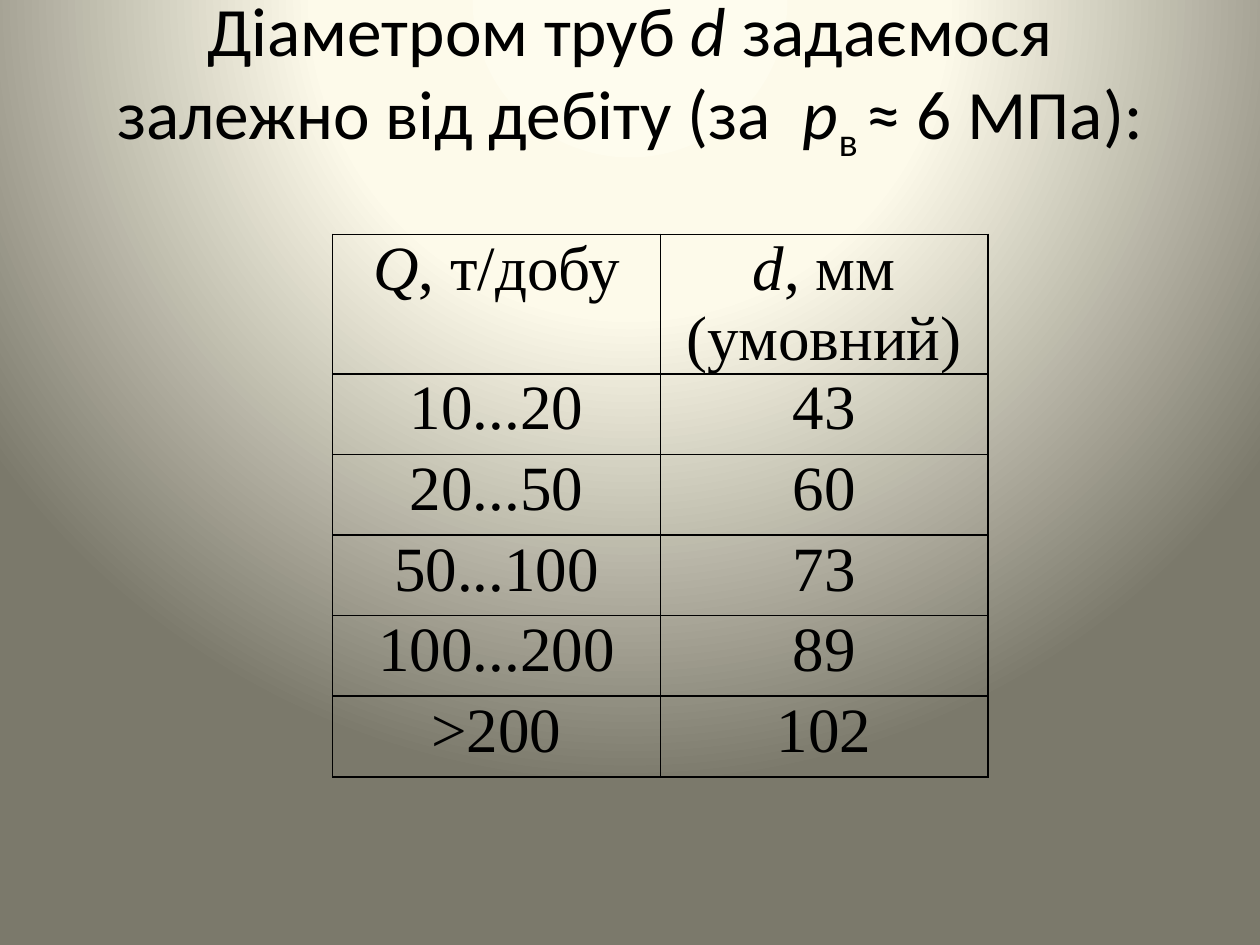
from dataclasses import dataclass

from pptx import Presentation
from pptx.dml.color import RGBColor
from pptx.enum.text import MSO_ANCHOR, MSO_AUTO_SIZE, PP_ALIGN
from pptx.oxml import parse_xml
from pptx.oxml.ns import nsdecls
from pptx.util import Inches, Pt

CENTER = PP_ALIGN.CENTER
MIDDLE, TOP = MSO_ANCHOR.MIDDLE, MSO_ANCHOR.TOP
NO_AUTOFIT = MSO_AUTO_SIZE.NONE
TITLE_ONLY = 5

TITLE_RUNS = [
    ("Діаметром труб ", ""),
    ("d", "italic"),
    (" задаємося залежно від дебіту (за  ", ""),
    ("р", "italic"),
    ("в ", "subscript"),
    ("≈ 6 МПа):", ""),
]
HEADER = [
    [("Q", "italic"), (", т/добу", "")],
    [("d", "italic"), (", мм (умовний)", "")],
]
DIAMETER_BY_FLOW = [
    ("10...20", "43"),
    ("20...50", "60"),
    ("50...100", "73"),
    ("100...200", "89"),
    (">200", "102"),
]


@dataclass(frozen=True)
class Theme:
    ink: str = "000000"
    glow: tuple = ((0, "FEFCEE"), (40, "FDFAEA"), (100, "7B796B"))
    title_font: str = "Calibri"
    title_size: float = 39.6
    table_font: str = "Times New Roman"
    table_size: float = 36
    border_width: float = 1


def apply_format(target, values):
    for name, value in values.items():
        setattr(target, name, value)


class SlideBuilder:
    def __init__(self, slide, theme):
        self.slide = slide
        self.theme = theme

    def background(self):
        """Radial gradient centred above the top edge of the slide."""
        stops = "".join(
            f'<a:gs pos="{position * 1000}"><a:srgbClr val="{color}"/></a:gs>'
            for position, color in self.theme.glow
        )
        self.slide.element.cSld.insert(0, parse_xml(
            f'<p:bg {nsdecls("p", "a")}><p:bgPr><a:gradFill rotWithShape="1">'
            f'<a:gsLst>{stops}</a:gsLst><a:path path="circle">'
            '<a:fillToRect l="50000" t="-80000" r="50000" b="180000"/>'
            '</a:path></a:gradFill><a:effectLst/></p:bgPr></p:bg>'
        ))

    def add_runs(self, paragraph, runs, font_name, size):
        paragraph.alignment = CENTER
        for text, style in runs:
            run = paragraph.add_run()
            run.text = text
            apply_format(run.font, {
                "name": font_name, "size": Pt(size), "italic": style == "italic",
            })
            run.font.color.rgb = RGBColor.from_string(self.theme.ink)
            if style == "subscript":
                run.font._element.set("baseline", "-25000")

    def title(self, runs, left, top, width, height):
        heading = self.slide.shapes.title
        apply_format(heading, {
            "left": Inches(left), "top": Inches(top),
            "width": Inches(width), "height": Inches(height),
        })
        # The deep bottom inset lifts the text clear of the table.
        apply_format(heading.text_frame, {
            "word_wrap": True, "auto_size": NO_AUTOFIT,
            "vertical_anchor": MIDDLE, "margin_bottom": Inches(0.7),
        })
        self.add_runs(heading.text_frame.paragraphs[0], runs,
                      self.theme.title_font, self.theme.title_size)

    def border(self, cell):
        properties = cell._tc.get_or_add_tcPr()
        for index, side in enumerate(("lnL", "lnR", "lnT", "lnB")):
            properties.insert(index, parse_xml(
                f'<a:{side} {nsdecls("a")} w="{int(Pt(self.theme.border_width))}">'
                f'<a:solidFill><a:srgbClr val="{self.theme.ink}"/></a:solidFill>'
                f'</a:{side}>'
            ))

    def table(self, rows, left, top, column_width, row_height):
        row_count, column_count = len(rows), len(rows[0])
        grid = self.slide.shapes.add_table(
            row_count, column_count, Inches(left), Inches(top),
            Inches(column_width * column_count), Inches(row_height * row_count),
        ).table
        apply_format(grid, {"first_row": False, "horz_banding": False})
        for row_index, row in enumerate(rows):
            for column_index, runs in enumerate(row):
                cell = grid.cell(row_index, column_index)
                apply_format(cell, {
                    "margin_left": Inches(0.07), "margin_right": Inches(0.07),
                    "margin_top": 0, "margin_bottom": 0, "vertical_anchor": TOP,
                })
                cell.fill.background()
                self.border(cell)
                self.add_runs(cell.text_frame.paragraphs[0], runs,
                              self.theme.table_font, self.theme.table_size)


def main():
    deck = Presentation()
    deck.slide_width, deck.slide_height = Inches(10), Inches(7.5)
    slide = deck.slides.add_slide(deck.slide_layouts[TITLE_ONLY])
    builder = SlideBuilder(slide, Theme())
    builder.background()
    builder.title(TITLE_RUNS, 0.5, 0.3, 9, 1.25)
    body = [[[(value, "")] for value in row] for row in DIAMETER_BY_FLOW]
    builder.table([HEADER] + body, 2.64, 1.86, column_width=2.6, row_height=0.64)
    deck.save("out.pptx")


if __name__ == "__main__":
    main()
